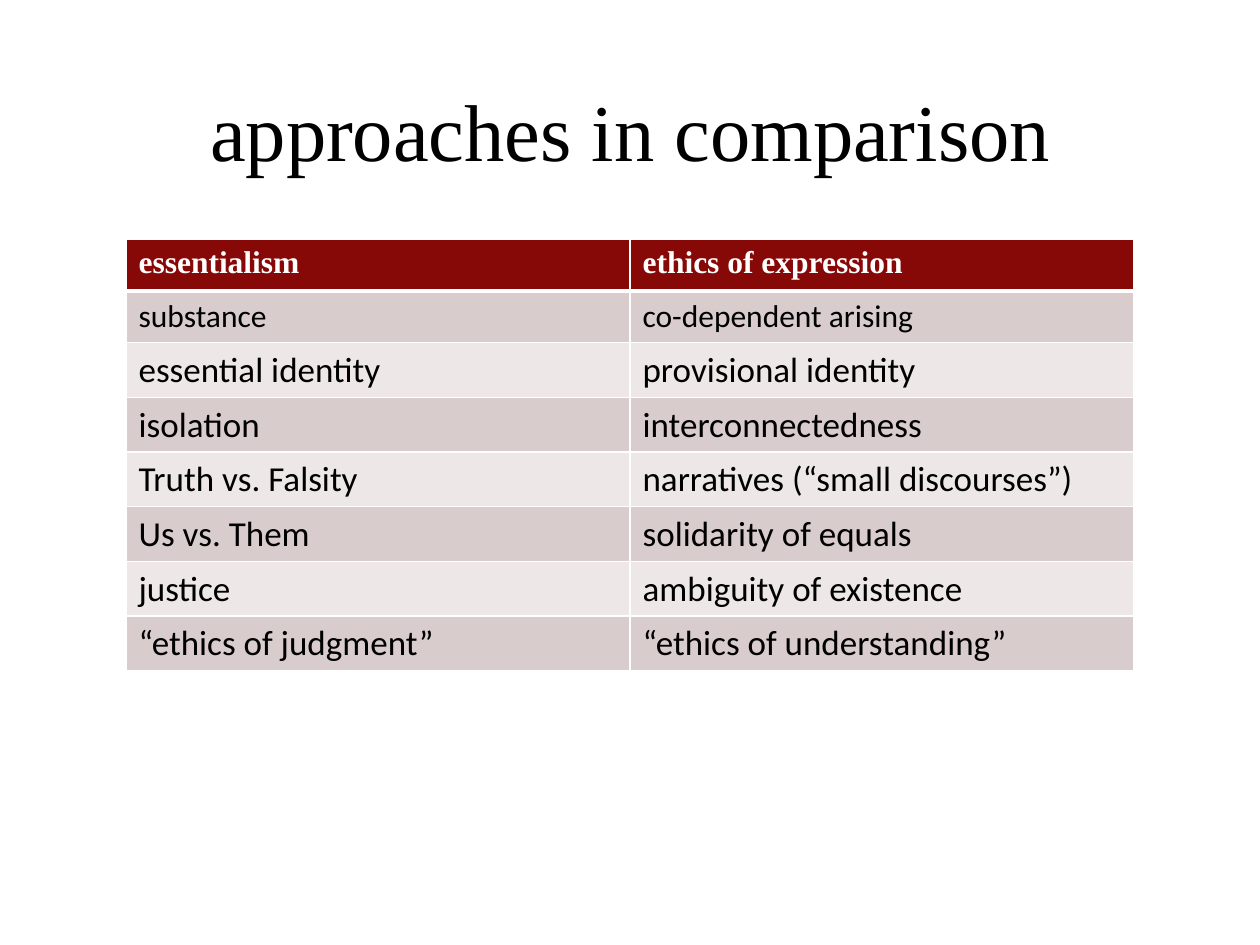
from dataclasses import dataclass

from lxml.etree import SubElement
from pptx import Presentation
from pptx.dml.color import RGBColor
from pptx.enum.text import MSO_ANCHOR, PP_ALIGN
from pptx.oxml.ns import qn
from pptx.util import Inches, Pt

BLACK = RGBColor(0x00, 0x00, 0x00)
WHITE = RGBColor(0xFF, 0xFF, 0xFF)
RED = RGBColor(0x86, 0x09, 0x08)
DARK = RGBColor(0xD9, 0xCC, 0xCC)
LIGHT = RGBColor(0xED, 0xE7, 0xE7)
SERIF = "Times New Roman"
SANS = "Calibri"


@dataclass
class Row:
    left: str
    right: str
    size: int = 20


HEAD = Row("essentialism", "ethics of expression", 18)
ROWS = [
    Row("substance", "co-dependent arising", 18),
    Row("essential identity", "provisional identity"),
    Row("isolation", "interconnectedness"),
    Row("Truth vs. Falsity", "narratives (“small discourses”)"),
    Row("Us vs. Them", "solidarity of equals"),
    Row("justice", "ambiguity of existence"),
    Row("“ethics of judgment”", "“ethics of understanding”"),
]


def write(frame, text: str, *, size: int, face: str = SANS,
          color: RGBColor = BLACK, bold: bool = False,
          align: PP_ALIGN = PP_ALIGN.LEFT) -> None:
    para = frame.paragraphs[0]
    para.alignment = align
    run = para.add_run()
    run.text = text
    font = run.font
    font.size = Pt(size)
    font.name = face
    font.bold = bold
    font.color.rgb = color


def border(cell, widths: dict[str, int]) -> None:
    props = cell._tc.get_or_add_tcPr()
    for side, width in widths.items():
        line = SubElement(props, qn(f"a:ln{side}"), w=str(Pt(width)))
        fill = SubElement(line, qn("a:solidFill"))
        SubElement(fill, qn("a:srgbClr"), val=str(WHITE))


def draw_row(table, index: int, row: Row) -> None:
    head = index == 0
    fill = RED if head else DARK if index % 2 else LIGHT
    style = dict(face=SERIF, color=WHITE, bold=True) if head else {}
    top = 3 if index == 1 else 1
    base = 3 if head else 1
    table.rows[index].height = Inches(0.41)
    for col, text in enumerate((row.left, row.right)):
        cell = table.cell(index, col)
        border(cell, {"L": 1, "R": 1, "T": top, "B": base})
        cell.fill.solid()
        cell.fill.fore_color.rgb = fill
        write(cell.text_frame, text, size=row.size, **style)


def main() -> None:
    deck = Presentation()
    deck.slide_width = Inches(10)
    deck.slide_height = Inches(7.5)
    slide = deck.slides.add_slide(deck.slide_layouts[6])

    title = slide.shapes.add_textbox(
        Inches(1), Inches(0.55), Inches(8), Inches(0.95))
    frame = title.text_frame
    frame.word_wrap = True
    frame.vertical_anchor = MSO_ANCHOR.MIDDLE
    write(frame, "approaches in comparison", size=46, face=SERIF,
          align=PP_ALIGN.CENTER)

    rows = [HEAD, *ROWS]
    table = slide.shapes.add_table(
        len(rows), 2, Inches(1), Inches(1.9), Inches(8), Inches(3.41)).table
    for index, row in enumerate(rows):
        draw_row(table, index, row)
    deck.save("out.pptx")


if __name__ == "__main__":
    main()
